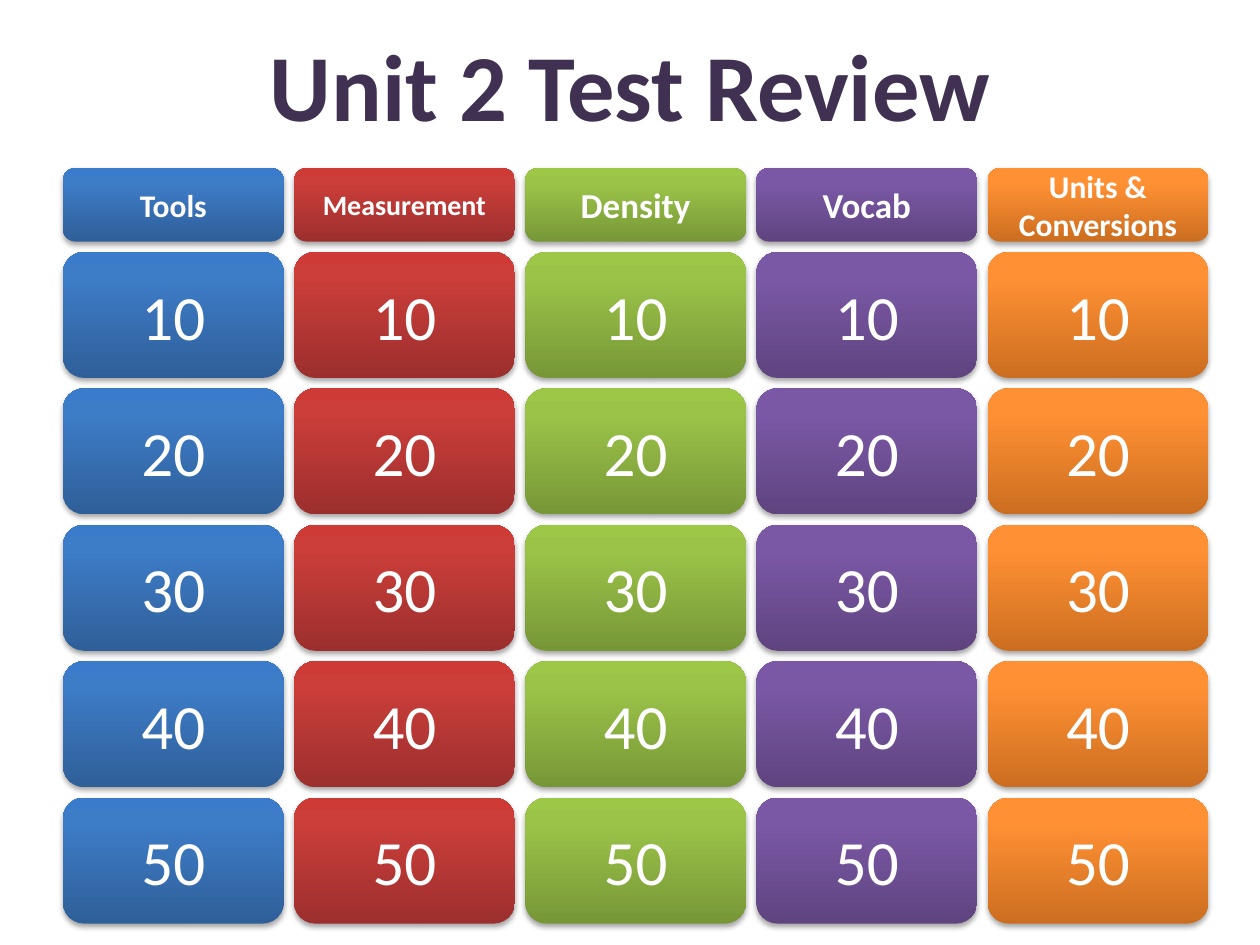
import pptx
import pptx.dml.color
import pptx.enum.shapes
import pptx.enum.text
import pptx.oxml
import pptx.oxml.ns
import pptx.util

Cm = pptx.util.Cm

# Grid, in cm
LEFT, TOP = 1.27, 5.08
WIDTH, TALL, HEAD = 4.45, 2.54, 1.48
GAP = 0.21

# Topic, text size, and gradient from bottom to top
TOPICS = [
    ("Tools", 18, ("2F5F99", "3D7CC7", "3A7CCB")),
    ("Measurement", 16, ("9C2F2D", "CB3E3A", "CE3B37")),
    ("Density", 20, ("779737", "9BC348", "9DC746")),
    ("Vocab", 20, ("5F4480", "7B58A6", "7C57A8")),
    ("Units & Conversions", 18, ("CC6E20", "FF9034", "FF9136")),
]
POINTS = (10, 20, 30, 40, 50)
STOPS = (0, 80, 100)


def color(code):
    return pptx.dml.color.RGBColor.from_string(code)


def write(shape, text, code, **style):
    """Put one centred line of styled text in a shape."""
    frame = shape.text_frame
    frame.word_wrap = True
    frame.vertical_anchor = pptx.enum.text.MSO_ANCHOR.MIDDLE
    para = frame.paragraphs[0]
    para.alignment = pptx.enum.text.PP_ALIGN.CENTER
    run = para.add_run()
    run.text = text
    for name, value in {"name": "Calibri", **style}.items():
        setattr(run.font, name, value)
    run.font.color.rgb = color(code)


def add_xml(shape, body):
    """Append a drawing element to the shape's properties."""
    tag, rest = body.split(" ", 1)
    space = pptx.oxml.ns.nsdecls("a")
    shape._element.spPr.append(pptx.oxml.parse_xml(f"{tag} {space} {rest}"))


def shade(shape, codes):
    """Give a shape a vertical gradient, no outline and a soft shadow."""
    stops = "".join(
        f'<a:gs pos="{stop * 1000}"><a:srgbClr val="{color(code)}"/></a:gs>'
        for stop, code in zip(STOPS, codes))
    add_xml(shape, f'<a:gradFill rotWithShape="1"><a:gsLst>{stops}</a:gsLst>'
                   '<a:lin ang="16200000" scaled="0"/></a:gradFill>')
    shape.line.fill.background()
    add_xml(shape, '<a:effectLst ><a:outerShdw blurRad="40000" dist="23000" '
                   'dir="5400000" rotWithShape="0"><a:srgbClr val="000000">'
                   '<a:alpha val="35000"/></a:srgbClr></a:outerShdw>'
                   '</a:effectLst>')


def add_tile(slide, box, codes, text, **style):
    kind = pptx.enum.shapes.MSO_SHAPE.ROUNDED_RECTANGLE
    tile = slide.shapes.add_shape(kind, *map(Cm, box))
    shade(tile, codes)
    write(tile, text, "FFFFFF", **style)


def add_title(slide, text):
    box = slide.shapes.add_textbox(Cm(LEFT), 0, Cm(22.86), Cm(3.39))
    write(box, text, "403152", size=pptx.util.Pt(54), bold=True)


def add_column(slide, left, topic, size, codes):
    # Heading
    add_tile(slide, (left, TOP - GAP - HEAD, WIDTH, HEAD), codes, topic,
             size=pptx.util.Pt(size), bold=True)
    # Point tiles
    for row, point in enumerate(POINTS):
        top = TOP + row * (TALL + GAP)
        add_tile(slide, (left, top, WIDTH, TALL), codes, str(point),
                 size=pptx.util.Pt(36))


def main():
    deck = pptx.Presentation()
    deck.slide_width, deck.slide_height = Cm(25.4), Cm(19.05)
    slide = deck.slides.add_slide(deck.slide_layouts[6])

    add_title(slide, "Unit 2 Test Review")
    for col, topic in enumerate(TOPICS):
        add_column(slide, LEFT + col * (WIDTH + GAP), *topic)

    deck.save("out.pptx")


if __name__ == "__main__":
    main()
